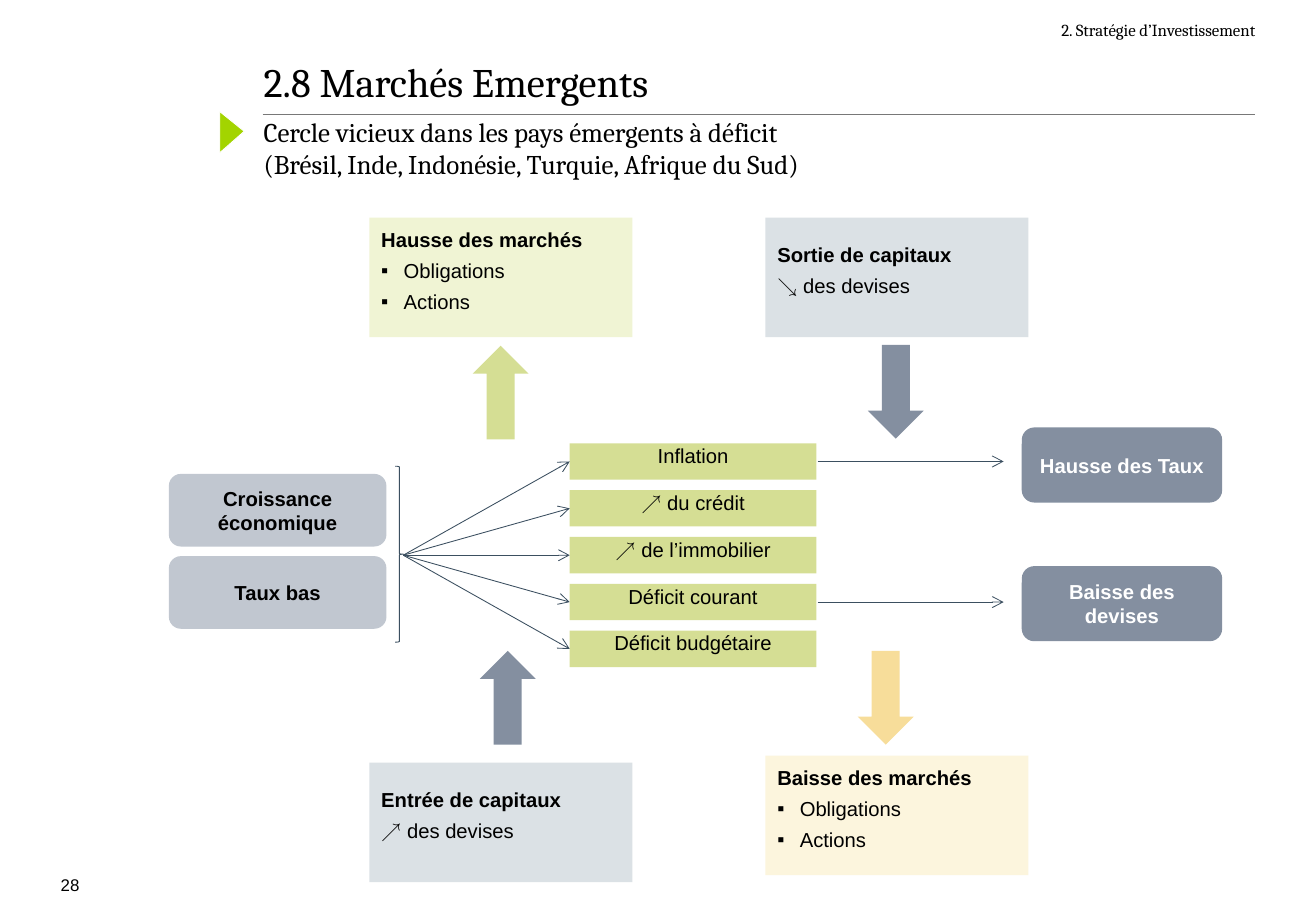
"""Build the slide on the vicious circle in emerging markets."""
import dataclasses

import lxml.etree
import pptx
import pptx.dml.color
import pptx.enum.shapes
import pptx.enum.text
import pptx.oxml.ns
import pptx.util

Cm = pptx.util.Cm
Pt = pptx.util.Pt
Kind = pptx.enum.shapes.MSO_SHAPE
Side = pptx.enum.text.PP_ALIGN
Hold = pptx.enum.text.MSO_ANCHOR
qn = pptx.oxml.ns.qn


@dataclasses.dataclass(frozen=True)
class Theme:
    """Colours, fonts and type sizes of the slide."""
    black: str = "000000"
    white: str = "FFFFFF"
    rule: str = "787878"
    ink: str = "3B4F60"
    slate: str = "848FA0"
    steel: str = "C1C7D0"
    mist: str = "DBE1E5"
    lime: str = "D5DE94"
    pale: str = "F0F4D4"
    gold: str = "F7DD9A"
    cream: str = "FCF5DD"
    leaf: str = "A3D400"
    serif: str = "Cambria"
    sans: str = "Arial"
    title: int = 24
    lead: int = 16
    text: int = 12
    small: int = 10
    thin: float = 0.5


theme = Theme()


def rgb(code):
    """Turn a hex code into a colour."""
    return pptx.dml.color.RGBColor.from_string(code)


def place(shape, box):
    """Move and size a shape in centimetres."""
    shape.left, shape.top, shape.width, shape.height = map(Cm, box)


def frame(shape, pad=(0, 0, 0, 0), hold=Hold.TOP):
    """Set the insets and anchor of a text frame and return it."""
    area = shape.text_frame
    area.word_wrap = True
    area.auto_size = pptx.enum.text.MSO_AUTO_SIZE.NONE
    area.vertical_anchor = hold
    area.margin_left, area.margin_top, area.margin_right, area.margin_bottom = map(Cm, pad)
    return area


def write(para, text, size=theme.text, face=theme.sans, tint=theme.black,
          bold=False, side=Side.LEFT, gap=0, left=0, hang=0, mark=None):
    """Fill and format one paragraph."""
    para.text = text
    para.alignment = side
    para.space_before = Pt(gap)
    props = para._p.get_or_add_pPr()
    props.set("marL", str(Cm(left)))
    props.set("indent", str(Cm(-hang)))
    if mark:
        lxml.etree.SubElement(props, qn("a:buFont"), typeface=theme.sans)
        lxml.etree.SubElement(props, qn("a:buChar"), char=mark)
    else:
        lxml.etree.SubElement(props, qn("a:buNone"))
    font = para.font
    font.size, font.name, font.bold = Pt(size), face, bold
    font.color.rgb = rgb(tint)


def block(slide, kind, box, fill, turn=0):
    """Add a filled shape without outline."""
    shape = slide.shapes.add_shape(kind, *map(Cm, box))
    shape.shadow.inherit = False
    shape.fill.solid()
    shape.fill.fore_color.rgb = rgb(fill)
    shape.line.fill.background()
    shape.rotation = turn
    return shape


def line(slide, start, end, tint=theme.ink, arrow=True):
    """Add a thin line, with an arrowhead if wanted."""
    link = slide.shapes.add_connector(
        pptx.enum.shapes.MSO_CONNECTOR.STRAIGHT, *map(Cm, start + end))
    link.line.color.rgb = rgb(tint)
    link.line.width = Pt(theme.thin)
    props = link.element.spPr
    if arrow:
        lxml.etree.SubElement(props.find(qn("a:ln")), qn("a:tailEnd"), type="arrow")
    lxml.etree.SubElement(props, qn("a:effectLst"))


def card(slide, left, top, fill, head, items, mark=None):
    """Add a panel with a bold heading and its lines."""
    shape = block(slide, Kind.RECTANGLE, (left, top, 5.5, 2.5), fill)
    area = frame(shape, (0, 0, 0, 0.3), Hold.MIDDLE)
    write(area.paragraphs[0], head, bold=True, left=0.25)
    for item in items:
        write(area.add_paragraph(), item, gap=4, left=0.72 if mark else 0.25,
              hang=0.47 if mark else 0, mark=mark)


def pill(slide, box, fill, text, tint):
    """Add a rounded box with a bold centred label."""
    shape = block(slide, Kind.ROUNDED_RECTANGLE, box, fill)
    area = frame(shape, (0.1, 0.1, 0.1, 0.1), Hold.MIDDLE)
    write(area.paragraphs[0], text, tint=tint, bold=True, side=Side.CENTER)


def bar(slide, left, top, text):
    """Add a green bar with a centred label."""
    shape = block(slide, Kind.RECTANGLE, (left, top, 5.16, 0.76), theme.lime)
    area = frame(shape, (0, 0, 0, 0.3))
    write(area.paragraphs[0], text, side=Side.CENTER)


def note(slide, box, pad, text, face, side):
    """Add a small text box."""
    shape = slide.shapes.add_textbox(*map(Cm, box))
    write(frame(shape, pad).paragraphs[0], text, theme.small, face, side=side)


def header(slide):
    """Fill the title, lead, running head and page number."""
    line(slide, (5.49, 2.39), (26.24, 2.39), theme.rule, arrow=False)
    title, lead = slide.shapes.title, slide.placeholders[1]
    place(title, (5.51, 1.35, 20.73, 0.99))
    area = frame(title, (0, 0, 0, 0.3), Hold.MIDDLE)
    write(area.paragraphs[0], "2.8 Marchés Emergents", theme.title, theme.serif)
    place(lead, (5.51, 2.41, 20.75, 0.89))
    area = frame(lead, (0, 0, 0, 0.3))
    write(area.paragraphs[0],
          "Cercle vicieux dans les pays émergents à déficit\v"
          "(Brésil, Inde, Indonésie, Turquie, Afrique du Sud)",
          theme.lead, theme.serif)
    wedge = block(slide, Kind.ISOSCELES_TRIANGLE, (4.42, 2.51, 0.86, 0.51), theme.leaf, 90)
    wedge.adjustments[0] = 0.48
    wedge.line.color.rgb = rgb(theme.white)
    wedge.line.width = Pt(theme.thin)
    note(slide, (17.35, 0.41, 8.89, 0.43), (0.25, 0, 0, 0),
         "2. Stratégie d’Investissement", theme.serif, Side.RIGHT)
    note(slide, (1.27, 18.14, 0.84, 0.56), (0, 0.15, 0, 0), "28", theme.sans, Side.LEFT)


def flow(slide):
    """Draw causes, effects and outcomes from left to right."""
    for top, text in ((9.91, "Croissance économique"), (11.63, "Taux bas")):
        pill(slide, (3.53, top, 4.55, 1.52), theme.steel, text, theme.black)
    brace = slide.shapes.add_shape(Kind.RIGHT_BRACE, *map(Cm, (8.26, 9.75, 0.18, 3.68)))
    brace.shadow.inherit = False
    brace.fill.background()
    brace.line.color.rgb = rgb(theme.ink)
    brace.line.width = Pt(theme.thin)
    left, first, step = 11.91, 9.27, 0.98
    names = ("Inflation", "↗ du crédit", "↗ de l’immobilier",
             "Déficit courant", "Déficit budgétaire")
    ends = {"Inflation": (8.94, "Hausse des Taux"),
            "Déficit courant": (11.84, "Baisse des devises")}
    for rank, name in enumerate(names):
        top = first + rank * step
        mid = top + 0.38
        bar(slide, left, top, name)
        line(slide, (8.43, 11.61), (left, mid))
        if name in ends:
            line(slide, (17.09, mid), (20.98, mid))
            high, text = ends[name]
            pill(slide, (21.36, high, 4.19, 1.57), theme.slate, text, theme.white)


def cycle(slide):
    """Draw the four panels and the block arrows."""
    goods = ("Obligations", "Actions")
    card(slide, 7.72, 4.55, theme.pale, "Hausse des marchés", goods, "▪")
    card(slide, 16, 4.55, theme.mist, "Sortie de capitaux", ("↘ des devises",))
    card(slide, 7.72, 15.95, theme.mist, "Entrée de capitaux", ("↗ des devises",))
    card(slide, 16, 15.8, theme.cream, "Baisse des marchés", goods, "▪")
    for left, top, fill, turn in ((9.88, 7.23, theme.lime, 0),
                                  (18.14, 7.21, theme.slate, 180),
                                  (10.03, 13.61, theme.slate, 0),
                                  (17.93, 13.61, theme.gold, 180)):
        block(slide, Kind.UP_ARROW, (left, top, 1.17, 1.96), fill, turn)


def main():
    """Build and save the deck."""
    deck = pptx.Presentation()
    deck.slide_width, deck.slide_height = Cm(27.51), Cm(19.05)
    slide = deck.slides.add_slide(deck.slide_layouts[1])
    header(slide)
    flow(slide)
    cycle(slide)
    deck.save("out.pptx")


if __name__ == "__main__":
    main()
